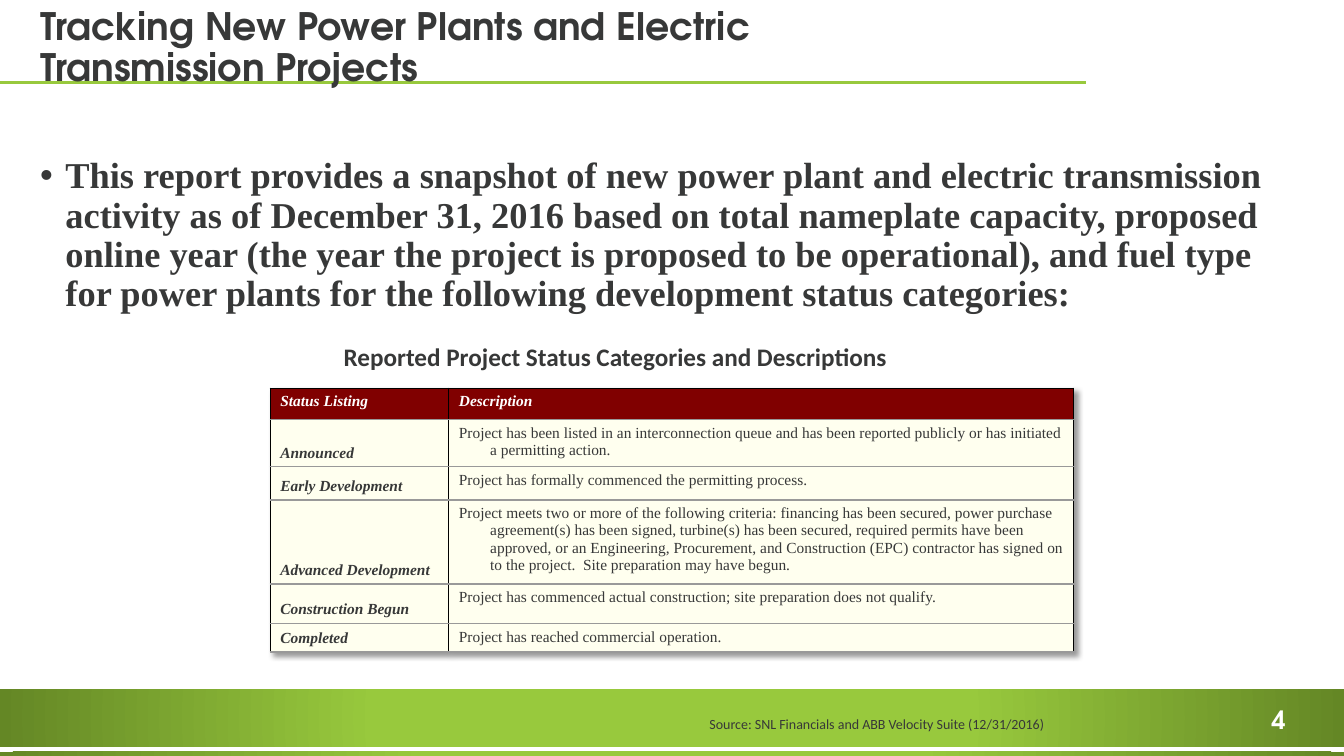
from lxml.etree import SubElement
from pptx import Presentation
from pptx.dml.color import RGBColor
from pptx.enum.shapes import MSO_CONNECTOR, MSO_SHAPE
from pptx.enum.text import MSO_ANCHOR, PP_ALIGN
from pptx.oxml import parse_xml
from pptx.oxml.ns import qn
from pptx.util import Cm, Pt

COLORS = {"text": "373838", "white": "FFFFFF", "green": "98C93D",
          "dark_green": "648725", "header": "800000", "cell": "FFFFEF",
          "black": "000000", "grid": "999999"}
HEADING_FONT, BODY_FONT, LABEL_FONT = "TeX Gyre Adventor", "Times New Roman", "Calibri"
NAMESPACE = 'xmlns:a="http://schemas.openxmlformats.org/drawingml/2006/main"'
WIDTH, HEIGHT = 33.87, 19.05

STATUSES = [
    ("Status Listing", "Description"),
    ("Announced", "Project has been listed in an interconnection queue and has been "
     "reported publicly or has initiated a permitting action."),
    ("Early Development", "Project has formally commenced the permitting process."),
    ("Advanced Development", "Project meets two or more of the following criteria: "
     "financing has been secured, power purchase agreement(s) has been signed, "
     "turbine(s) has been secured, required permits have been approved, or an "
     "Engineering, Procurement, and Construction (EPC) contractor has signed on to "
     "the project.  Site preparation may have begun."),
    ("Construction Begun", "Project has commenced actual construction; site "
     "preparation does not qualify."),
    ("Completed", "Project has reached commercial operation."),
]
COLUMN_WIDTHS = [4.5, 15.75]
ROW_HEIGHTS = [0.79, 1.17, 0.84, 1.98, 0.99, 0.69]


def write(frame, text, font=LABEL_FONT, size=18, color="text", bold=False, italic=False,
          indent=0, bullet=None, line_spacing=None, anchor=MSO_ANCHOR.TOP, wrap=True):
    """Fill a text frame with one formatted paragraph."""
    frame.word_wrap = wrap
    frame.vertical_anchor = anchor
    frame.text = text
    paragraph = frame.paragraphs[0]
    paragraph.alignment = PP_ALIGN.LEFT
    if line_spacing:
        paragraph.line_spacing = line_spacing
    properties = paragraph._p.get_or_add_pPr()
    if indent:
        properties.set("marL", str(Cm(indent)))
        properties.set("indent", str(-Cm(indent)))
    if bullet:
        SubElement(properties, qn("a:buFont")).set("typeface", "Arial")
        SubElement(properties, qn("a:buChar")).set("char", bullet)
    for run in paragraph.runs:
        run.font.name = font
        run.font.size = Pt(size)
        run.font.bold = bold
        run.font.italic = italic
        run.font.color.rgb = RGBColor.from_string(COLORS[color])


def add_text(slide, box, text, **text_format):
    shape = slide.shapes.add_textbox(*map(Cm, box))
    write(shape.text_frame, text, **text_format)


def add_band(slide, box, green_stop):
    """Bar that darkens from its centre to its ends."""
    shape = slide.shapes.add_shape(MSO_SHAPE.RECTANGLE, *map(Cm, box))
    shape.shadow.inherit = False
    shape.line.fill.background()
    shape.fill.background()
    properties = shape.element.spPr
    gradient = parse_xml(
        f'<a:gradFill {NAMESPACE} rotWithShape="1"><a:gsLst>'
        f'<a:gs pos="{green_stop * 1000}"><a:srgbClr val="{COLORS["green"]}"/></a:gs>'
        f'<a:gs pos="100000"><a:srgbClr val="{COLORS["dark_green"]}"/></a:gs></a:gsLst>'
        '<a:path path="circle"><a:fillToRect l="50000" t="50000" r="50000" b="50000"/>'
        '</a:path></a:gradFill>')
    properties.replace(properties.find(qn("a:noFill")), gradient)


def add_header(slide, box):
    left, top, width, height = box
    # Rule under the title
    rule_top = Cm(top + 1.37)
    rule = slide.shapes.add_connector(MSO_CONNECTOR.STRAIGHT, 0, rule_top, Cm(27.38), rule_top)
    rule.line.color.rgb = RGBColor.from_string(COLORS["green"])
    rule.line.width = Pt(1.75)
    SubElement(rule.element.spPr, qn("a:effectLst"))
    # Title, in front of the rule
    title = slide.shapes.title
    title.left, title.top, title.width, title.height = map(Cm, box)
    write(title.text_frame, "Tracking New Power Plants and Electric \vTransmission Projects",
          font=HEADING_FONT, size=27, bold=True, line_spacing=0.9, anchor=MSO_ANCHOR.BOTTOM)
    slide.shapes.element.append(title.element)


def add_footer(slide, box):
    left, top, width, height = box
    add_band(slide, (left, top, width, 1.45), 44)
    add_band(slide, (left, top + height - 0.1, width, 0.13), 37)
    add_text(slide, (left + 31.8, top + 0.25, 1.22, 1.02), "4",
             font=HEADING_FONT, color="white", bold=True, wrap=False)
    add_text(slide, (left + 17.63, top + 0.53, 9.09, 0.69),
             "Source: SNL Financials and ABB Velocity Suite (12/31/2016)", size=10, wrap=False)


def set_borders(cell, **sides):
    properties = cell._tc.get_or_add_tcPr()
    for position, (side, color) in enumerate(sides.items()):
        properties.insert(position, parse_xml(
            f'<a:{side} {NAMESPACE} w="12700"><a:solidFill>'
            f'<a:srgbClr val="{COLORS[color]}"/></a:solidFill></a:{side}>'))


def add_status_table(slide, box):
    left, top, width, height = box
    add_text(slide, (left + 1.6, top - 1.3, 14.55, 1.02),
             "Reported Project Status Categories and Descriptions", bold=True)
    table = slide.shapes.add_table(len(STATUSES), 2, *map(Cm, box)).table
    for column, column_width in zip(table.columns, COLUMN_WIDTHS):
        column.width = Cm(column_width)
    for row, row_height in zip(table.rows, ROW_HEIGHTS):
        row.height = Cm(row_height)
    for row_index, status in enumerate(STATUSES):
        header = row_index == 0
        for column_index, text in enumerate(status):
            label = column_index == 0
            cell = table.cell(row_index, column_index)
            write(cell.text_frame, text, font=BODY_FONT, size=11, indent=0.79,
                  color="white" if header else "text",
                  bold=header or label, italic=header or label)
            cell.vertical_anchor = MSO_ANCHOR.BOTTOM if label and not header else MSO_ANCHOR.TOP
            cell.fill.solid()
            cell.fill.fore_color.rgb = RGBColor.from_string(COLORS["header" if header else "cell"])
            set_borders(cell, lnL="black", lnR="black",
                        lnT="black" if header else "grid", lnB="grid")
    # Soft shadow at the lower right
    table._tbl.tblPr.insert(0, parse_xml(
        f'<a:effectLst {NAMESPACE}><a:outerShdw blurRad="50800" dist="38100" dir="2700000" '
        f'algn="tl" rotWithShape="0"><a:srgbClr val="{COLORS["black"]}"><a:alpha val="40000"/>'
        '</a:srgbClr></a:outerShdw></a:effectLst>'))


def main():
    presentation = Presentation()
    presentation.slide_width, presentation.slide_height = Cm(WIDTH), Cm(HEIGHT)
    slide = presentation.slides.add_slide(presentation.slide_layouts[5])
    add_footer(slide, (0, 17.37, WIDTH, HEIGHT - 17.37))
    add_header(slide, (0.76, 0.71, 32.18, 1.68))
    # Introduction
    add_text(slide, (0.76, 3.84, 32.18, 4.5),
             "This report provides a snapshot of new power plant and electric transmission "
             "activity as of December 31, 2016 based on total nameplate capacity, proposed "
             "online year (the year the project is proposed to be operational), and fuel type "
             "for power plants for the following development status categories:",
             font=BODY_FONT, size=26, bold=True, indent=0.64, bullet="•", line_spacing=0.9)
    add_status_table(slide, (6.81, 9.78, sum(COLUMN_WIDTHS), sum(ROW_HEIGHTS)))
    presentation.save("out.pptx")


if __name__ == "__main__":
    main()
